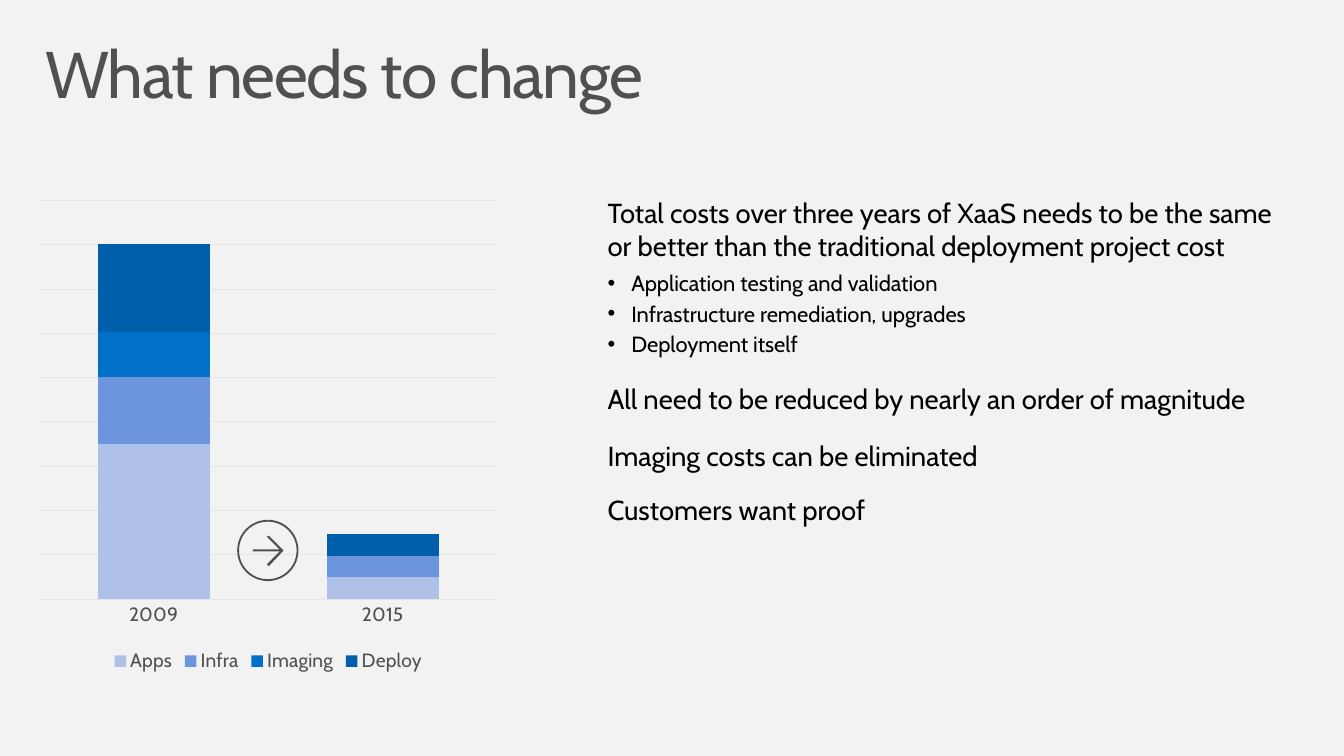
from dataclasses import dataclass

from lxml.etree import SubElement
from pptx import Presentation
from pptx.chart.data import CategoryChartData
from pptx.dml.color import RGBColor
from pptx.enum.chart import XL_CHART_TYPE, XL_LEGEND_POSITION, XL_TICK_MARK
from pptx.enum.shapes import MSO_SHAPE
from pptx.oxml import parse_xml
from pptx.oxml.ns import nsdecls, qn
from pptx.slide import Slide
from pptx.util import Inches, Pt


@dataclass(frozen=True)
class Theme:
    font: str = "Cabin"
    background: str = "F2F2F2"
    heading: str = "505050"
    body: str = "000000"
    grid: str = "E5E5E5"
    bars: tuple = ("AFC0E9", "6C95DD", "0070C9", "005FAA")
    title_size: int = 48
    point_size: int = 20
    detail_size: int = 16
    label_size: int = 14


@dataclass
class SlideBuilder:
    slide: Slide
    theme: Theme

    def background(self):
        fill = self.slide.background.fill
        fill.solid()
        fill.fore_color.rgb = RGBColor.from_string(self.theme.background)

    def style(self, font, size, color):
        font.name = self.theme.font
        font.size = Pt(size)
        font.color.rgb = RGBColor.from_string(color)

    def frame(self, left, top, width, height):
        box = self.slide.shapes.add_textbox(Inches(left), Inches(top), Inches(width), Inches(height))
        box.text_frame.word_wrap = True
        return box.text_frame

    def title(self, words, left, top, width, height):
        heading = self.frame(left, top, width, height)
        heading.margin_left = heading.margin_right = Inches(0.16)
        heading.margin_top = heading.margin_bottom = Inches(0.1)
        heading.paragraphs[0].line_spacing = 0.9
        run = heading.paragraphs[0].add_run()
        run.text = words
        self.style(run.font, self.theme.title_size, self.theme.heading)
        run.font._element.set("spc", "-100")

    def points(self, entries, left, top, width, height):
        body = self.frame(left, top, width, height)
        for index, (words, is_detail, space_after) in enumerate(entries):
            paragraph = body.add_paragraph() if index else body.paragraphs[0]
            paragraph.space_after = Pt(space_after)
            if is_detail:
                paragraph.level = 1
                properties = paragraph._p.get_or_add_pPr()
                properties.set("marL", str(Inches(0.24)))
                properties.set("indent", str(-Inches(0.24)))
                SubElement(properties, qn("a:buFont")).set("typeface", "Arial")
                SubElement(properties, qn("a:buChar")).set("char", "•")
            run = paragraph.add_run()
            run.text = words
            size = self.theme.detail_size if is_detail else self.theme.point_size
            self.style(run.font, size, self.theme.body)
        paragraph.line_spacing = 0.9

    def grid_line(self, line):
        line.color.rgb = RGBColor.from_string(self.theme.grid)
        line.width = Pt(0.75)

    def cost_chart(self, years, costs, left, top, width, height):
        data = CategoryChartData()
        data.categories = years
        for name, values in costs:
            data.add_series(name, values)
        chart = self.slide.shapes.add_chart(
            XL_CHART_TYPE.COLUMN_STACKED,
            Inches(left), Inches(top), Inches(width), Inches(height), data,
        ).chart
        chart.has_title = False
        self.style(chart.font, self.theme.label_size, self.theme.heading)

        plot = chart.plots[0]
        plot.gap_width = 105
        plot.overlap = 100
        plot.vary_by_categories = False
        for series, color in zip(plot.series, self.theme.bars):
            series.format.fill.solid()
            series.format.fill.fore_color.rgb = RGBColor.from_string(color)

        year_axis = chart.category_axis
        year_axis.major_tick_mark = XL_TICK_MARK.NONE
        year_axis.minor_tick_mark = XL_TICK_MARK.NONE
        self.style(year_axis.tick_labels.font, self.theme.label_size, self.theme.heading)
        self.grid_line(year_axis.format.line)

        cost_axis = chart.value_axis
        cost_axis.visible = False
        cost_axis.minimum_scale = 0
        cost_axis.maximum_scale = 257.2
        cost_axis.major_unit = 28.57
        cost_axis.has_major_gridlines = True
        self.grid_line(cost_axis.major_gridlines.format.line)

        chart.has_legend = True
        chart.legend.position = XL_LEGEND_POSITION.BOTTOM
        chart.legend.include_in_layout = False
        self.style(chart.legend.font, self.theme.label_size, self.theme.heading)
        self.place_plot(chart, x=0.02, y=0.02, w=0.96, h=0.82)

    def place_plot(self, chart, **fractions):
        plot_area = chart._chartSpace.chart.plotArea
        for layout in plot_area.findall(qn("c:layout")):
            plot_area.remove(layout)
        sizes = "".join(f'<c:{side} val="{value}"/>' for side, value in fractions.items())
        plot_area.insert(0, parse_xml(
            f'<c:layout {nsdecls("c")}><c:manualLayout><c:layoutTarget val="inner"/>'
            f'<c:xMode val="edge"/><c:yMode val="edge"/>{sizes}</c:manualLayout></c:layout>'
        ))

    def arrow_badge(self, left, top, diameter, outline):
        badge = self.slide.shapes.add_group_shape()
        corners = [(Inches(x), Inches(y)) for x, y in outline]
        builder = badge.shapes.build_freeform(*corners[0])
        builder.add_line_segments(corners[1:], close=True)
        arrow = builder.convert_to_shape()
        ring = badge.shapes.add_shape(
            MSO_SHAPE.DONUT, Inches(left), Inches(top), Inches(diameter), Inches(diameter)
        )
        ring.adjustments[0] = 0.03
        for part in (arrow, ring):
            part.shadow.inherit = False
            part.fill.solid()
            part.fill.fore_color.rgb = RGBColor.from_string(self.theme.heading)
            part.line.fill.background()


def main():
    presentation = Presentation()
    presentation.slide_width = Inches(13.6)
    presentation.slide_height = Inches(7.65)
    builder = SlideBuilder(presentation.slides.add_slide(presentation.slide_layouts[6]), Theme())
    builder.background()
    builder.title("What needs to change", 0.3, 0.32, 13, 1)
    costs = [
        ("Apps", (100, 14)),
        ("Infra", (43, 14)),
        ("Imaging", (29, 0)),
        ("Deploy", (57, 14)),
    ]
    builder.cost_chart(["2009", "2015"], costs, 0.3, 1.93, 4.83, 4.92)
    arguments = [
        ("Total costs over three years of XaaS needs to be the same or better than "
         "the traditional deployment project cost", False, 6),
        ("Application testing and validation", True, 3),
        ("Infrastructure remediation, upgrades", True, 3),
        ("Deployment itself", True, 18),
        ("All need to be reduced by nearly an order of magnitude", False, 18),
        ("Imaging costs can be eliminated", False, 18),
        ("Customers want proof", False, 18),
    ]
    builder.points(arguments, 6.05, 1.93, 7.07, 3.48)
    arrow_outline = [
        (2.7, 5.43), (2.83, 5.56), (2.56, 5.56), (2.56, 5.58), (2.83, 5.58),
        (2.7, 5.71), (2.72, 5.73), (2.87, 5.57), (2.72, 5.42),
    ]
    builder.arrow_badge(2.4, 5.26, 0.62, arrow_outline)
    presentation.save("out.pptx")


if __name__ == "__main__":
    main()
